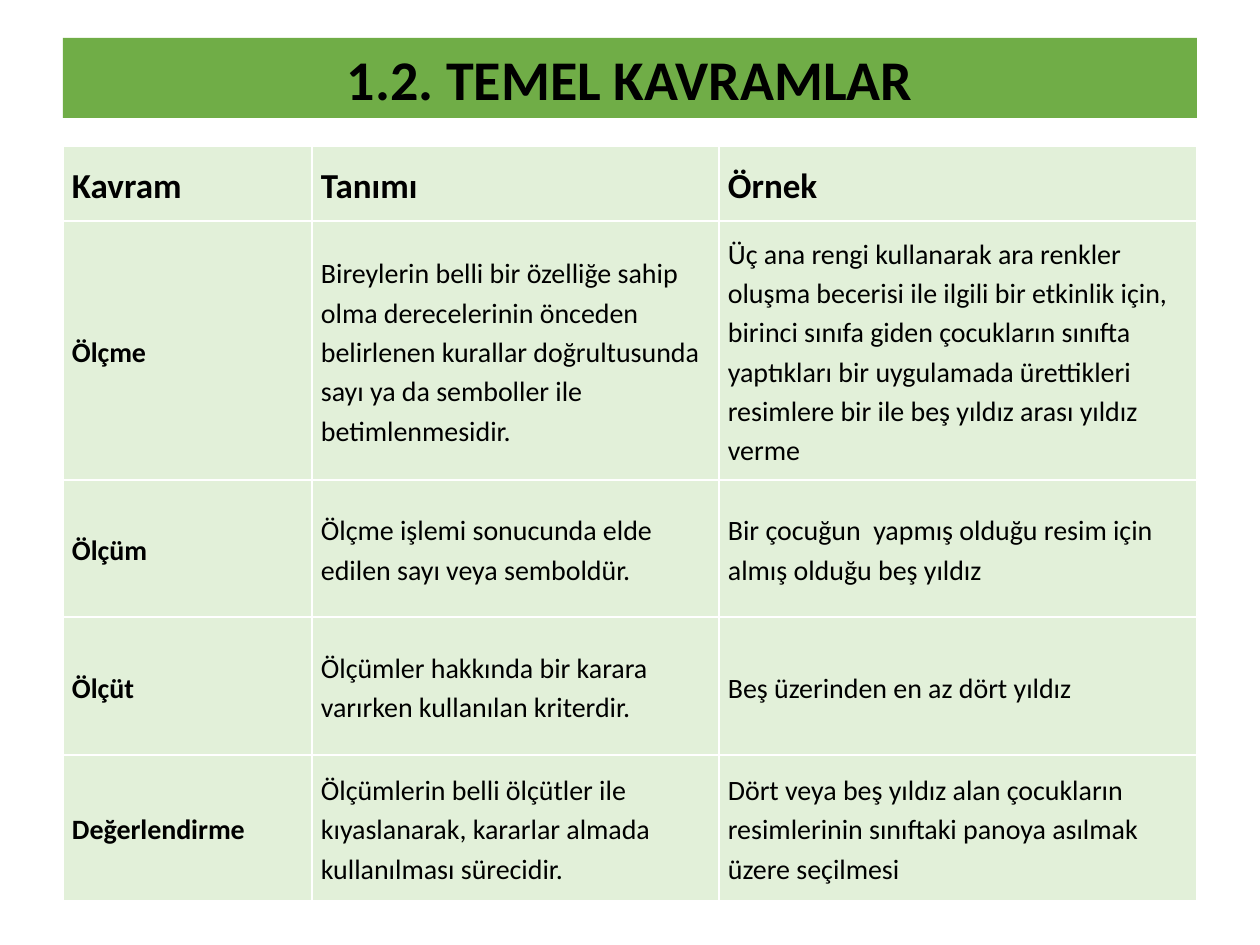
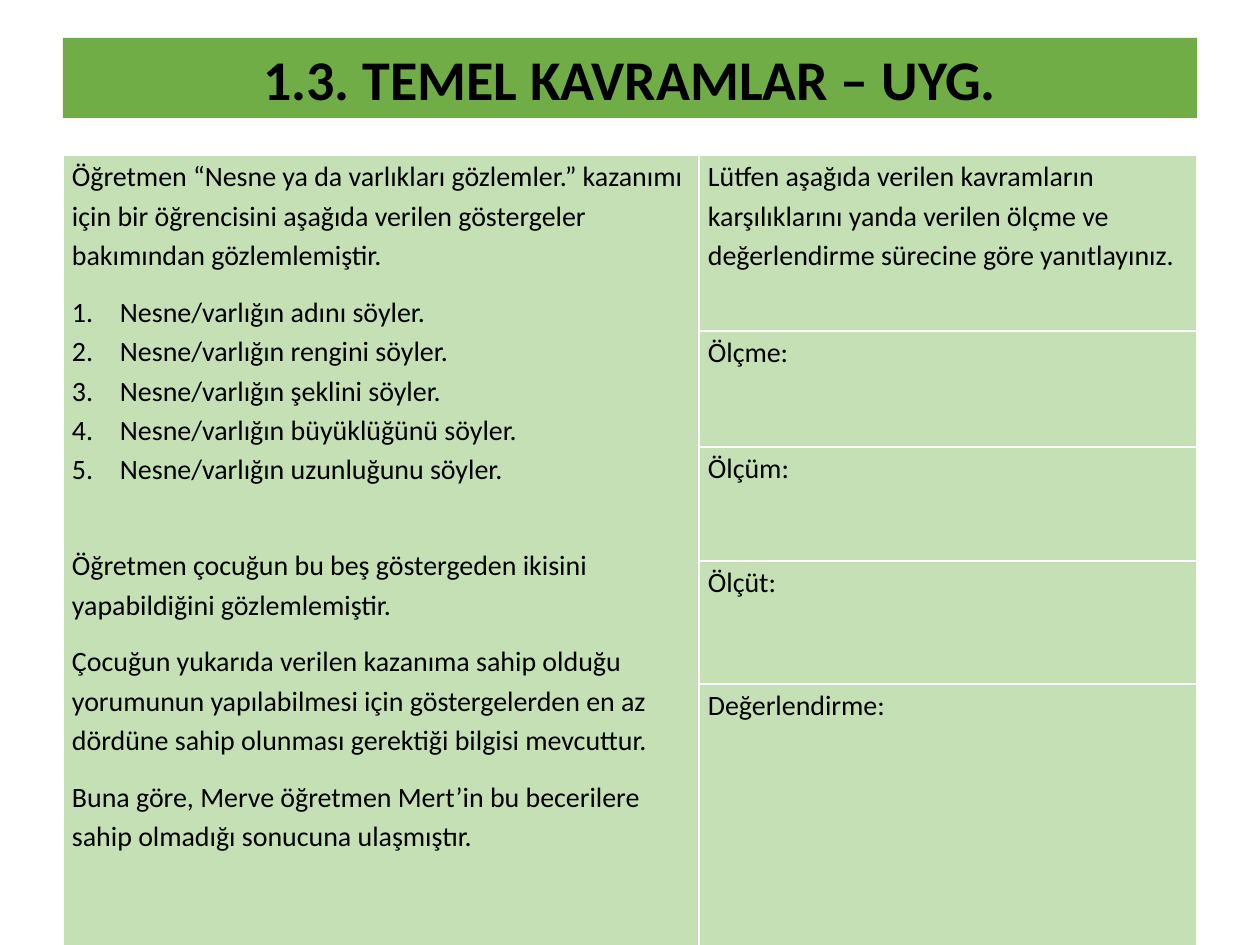
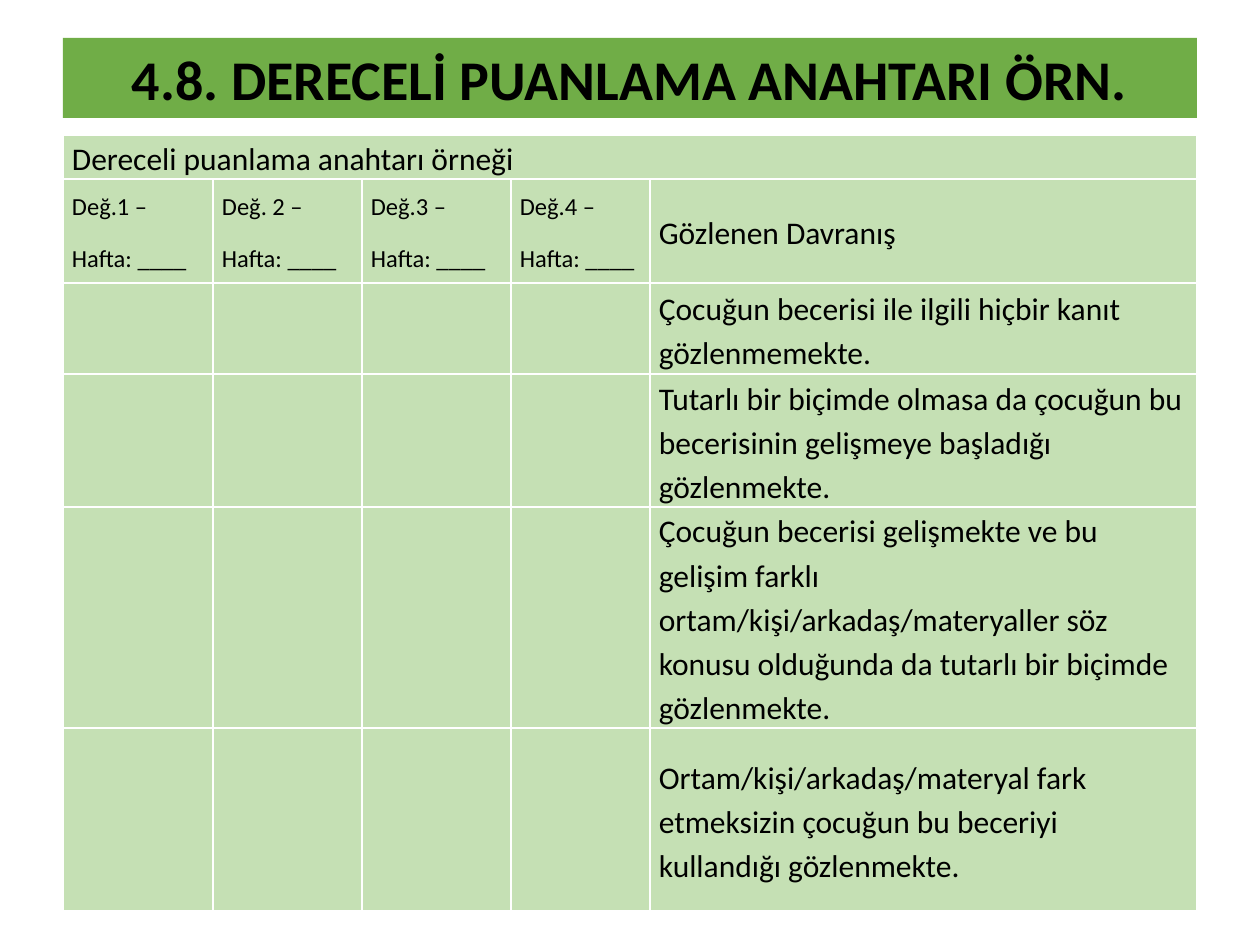
from dataclasses import dataclass

from lxml import etree
from pptx import Presentation
from pptx.dml.color import RGBColor
from pptx.enum import shapes, text
from pptx.oxml.ns import qn
from pptx.util import Pt


@dataclass(frozen=True)
class Theme:
    font: str = "Calibri"
    ink: str = "000000"
    line: str = "FFFFFF"
    band: str = "70AD47"
    pale: str = "E2F0D9"
    soft: str = "C5E0B4"
    title: int = 32
    heading: int = 20
    large: int = 18
    body: int = 16
    small: int = 14
    leading: float = 1.15
    gap: int = 10
    list_end: float = 32.4


THEME = Theme()
PX_PER_INCH = 126
PAGE = (1260, 945)
BAND = (63, 38, 1134, 80)
INSET = 9
LIST_INDENT = 48
BORDER_PT = 1

CONCEPTS = [
    ("Kavram", "Tanımı", "Örnek"),
    ("Ölçme",
     "Bireylerin belli bir özelliğe sahip olma derecelerinin önceden belirlenen kurallar "
     "doğrultusunda sayı ya da semboller ile betimlenmesidir.",
     "Üç ana rengi kullanarak ara renkler oluşma becerisi ile ilgili bir etkinlik için, "
     "birinci sınıfa giden çocukların sınıfta yaptıkları bir uygulamada ürettikleri "
     "resimlere bir ile beş yıldız arası yıldız verme"),
    ("Ölçüm",
     "Ölçme işlemi sonucunda elde edilen sayı veya semboldür.",
     "Bir çocuğun  yapmış olduğu resim için almış olduğu beş yıldız"),
    ("Ölçüt",
     "Ölçümler hakkında bir karara varırken kullanılan kriterdir.",
     "Beş üzerinden en az dört yıldız"),
    ("Değerlendirme",
     "Ölçümlerin belli ölçütler ile kıyaslanarak, kararlar almada kullanılması sürecidir.",
     "Dört veya beş yıldız alan çocukların resimlerinin sınıftaki panoya asılmak üzere "
     "seçilmesi"),
]

CASE_INTRO = ("Öğretmen “Nesne ya da varlıkları gözlemler.” kazanımı için bir öğrencisini "
              "aşağıda verilen göstergeler bakımından gözlemlemiştir.")
INDICATORS = [
    "Nesne/varlığın adını söyler.",
    "Nesne/varlığın rengini söyler.",
    "Nesne/varlığın şeklini söyler.",
    "Nesne/varlığın büyüklüğünü söyler.",
    "Nesne/varlığın uzunluğunu söyler.",
]
CASE_RESULT = [
    "Öğretmen çocuğun bu beş göstergeden ikisini yapabildiğini gözlemlemiştir.",
    "Çocuğun yukarıda verilen kazanıma sahip olduğu yorumunun yapılabilmesi için "
    "göstergelerden en az dördüne sahip olunması gerektiği bilgisi mevcuttur.",
    "Buna göre, Merve öğretmen Mert’in bu becerilere sahip olmadığı sonucuna ulaşmıştır.",
]
QUESTIONS = [
    "Lütfen aşağıda verilen kavramların karşılıklarını yanda verilen ölçme ve "
    "değerlendirme sürecine göre yanıtlayınız.",
    "Ölçme:", "Ölçüm:", "Ölçüt:", "Değerlendirme:",
]

RUBRIC_TITLE = "Dereceli puanlama anahtarı örneği"
RATINGS = ["Değ.1 –", "Değ. 2 –", "Değ.3 –", "Değ.4 –"]
WEEK = "Hafta: ____"
BEHAVIOURS = [
    "Gözlenen Davranış",
    "Çocuğun becerisi ile ilgili hiçbir kanıt gözlenmemekte.",
    "Tutarlı bir biçimde olmasa da çocuğun bu becerisinin gelişmeye başladığı gözlenmekte.",
    "Çocuğun becerisi gelişmekte ve bu gelişim farklı ortam/kişi/arkadaş/materyaller söz "
    "konusu olduğunda da tutarlı bir biçimde gözlenmekte.",
    "Ortam/kişi/arkadaş/materyal fark etmeksizin çocuğun bu beceriyi kullandığı gözlenmekte.",
]


def px(length):
    return round(length * 914400 / PX_PER_INCH)


def color(value):
    return RGBColor.from_string(value)


def add_span(para, words, size, bold=False):
    span = para.add_run()
    span.text = words
    span.font.name = THEME.font
    span.font.size = Pt(size)
    span.font.bold = bold
    span.font.color.rgb = color(THEME.ink)


def add_page(deck, title):
    page = deck.slides.add_slide(deck.slide_layouts[6])
    band = page.shapes.add_shape(shapes.MSO_SHAPE.RECTANGLE, *map(px, BAND))
    band.shadow.inherit = False
    band.fill.solid()
    band.fill.fore_color.rgb = color(THEME.band)
    band.line.fill.background()
    band.text_frame.word_wrap = True
    band.text_frame.vertical_anchor = text.MSO_ANCHOR.MIDDLE
    para = band.text_frame.paragraphs[0]
    para.alignment = text.PP_ALIGN.CENTER
    add_span(para, title, THEME.title, bold=True)
    return page


def style_cell(cell, fill, anchor):
    cell.margin_left = cell.margin_right = px(INSET)
    cell.margin_top = cell.margin_bottom = 0
    cell.vertical_anchor = anchor
    cell.fill.solid()
    cell.fill.fore_color.rgb = color(fill)
    properties = cell._tc.get_or_add_tcPr()
    for index, side in enumerate(("a:lnL", "a:lnR", "a:lnT", "a:lnB")):
        border = etree.Element(qn(side), w=str(Pt(BORDER_PT)))
        paint = etree.SubElement(border, qn("a:solidFill"))
        etree.SubElement(paint, qn("a:srgbClr"), val=THEME.line)
        properties.insert(index, border)


def add_grid(page, top, columns, rows, fill, anchor=text.MSO_ANCHOR.MIDDLE):
    frame = page.shapes.add_table(len(rows), len(columns), px(BAND[0]), px(top),
                                  px(sum(columns)), px(sum(rows)))
    grid = frame.table
    grid.first_row = grid.horz_banding = False
    for column, width in zip(grid.columns, columns):
        column.width = px(width)
    for row, height in zip(grid.rows, rows):
        row.height = px(height)
    for cell in grid.iter_cells():
        style_cell(cell, fill, anchor)
    return grid


def write(cell, paragraphs, size, bold=False, numbered=()):
    for index, words in enumerate(paragraphs):
        para = cell.text_frame.paragraphs[0] if index == 0 else cell.text_frame.add_paragraph()
        after = THEME.gap
        if index in numbered:
            properties = para._p.get_or_add_pPr()
            properties.set("marL", str(px(LIST_INDENT)))
            properties.set("indent", str(-px(LIST_INDENT)))
            etree.SubElement(properties, qn("a:buAutoNum"), type="arabicPeriod")
            after = THEME.list_end if index == numbered[-1] else 0
        para.line_spacing = THEME.leading
        para.space_after = Pt(after)
        add_span(para, words, size, bold)


def add_concepts(deck):
    page = add_page(deck, "1.2. TEMEL KAVRAMLAR")
    grid = add_grid(page, 146, [249, 407, 478], [75, 259, 137, 138, 146], THEME.pale)
    for r, row in enumerate(CONCEPTS):
        for c, words in enumerate(row):
            size = THEME.heading if r == 0 else THEME.body
            write(grid.cell(r, c), [words], size, bold=r == 0 or c == 0)


def add_exercise(deck):
    page = add_page(deck, "1.3. TEMEL KAVRAMLAR – UYG.")
    grid = add_grid(page, 155, [636, 498], [176, 116, 114, 123, 261], THEME.soft,
                    text.MSO_ANCHOR.TOP)
    grid.cell(0, 0).merge(grid.cell(len(QUESTIONS) - 1, 0))
    write(grid.cell(0, 0), [CASE_INTRO, *INDICATORS, *CASE_RESULT], THEME.body,
          numbered=range(1, len(INDICATORS) + 1))
    for r, question in enumerate(QUESTIONS):
        write(grid.cell(r, 1), [question], THEME.body)


def add_rubric(deck):
    page = add_page(deck, "4.8. DERECELİ PUANLAMA ANAHTARI ÖRN.")
    grid = add_grid(page, 135, [150, 149, 149, 139, 547], [44, 104, 91, 133, 221, 183],
                    THEME.soft)
    last = len(RATINGS)
    grid.cell(0, 0).merge(grid.cell(0, last))
    write(grid.cell(0, 0), [RUBRIC_TITLE], THEME.large)
    for c, rating in enumerate(RATINGS):
        write(grid.cell(1, c), [rating, WEEK], THEME.small)
    for r, behaviour in enumerate(BEHAVIOURS, start=1):
        write(grid.cell(r, last), [behaviour], THEME.large)


def main():
    deck = Presentation()
    deck.slide_width, deck.slide_height = map(px, PAGE)
    for add_content in (add_concepts, add_exercise, add_rubric):
        add_content(deck)
    deck.save("out.pptx")


if __name__ == "__main__":
    main()
